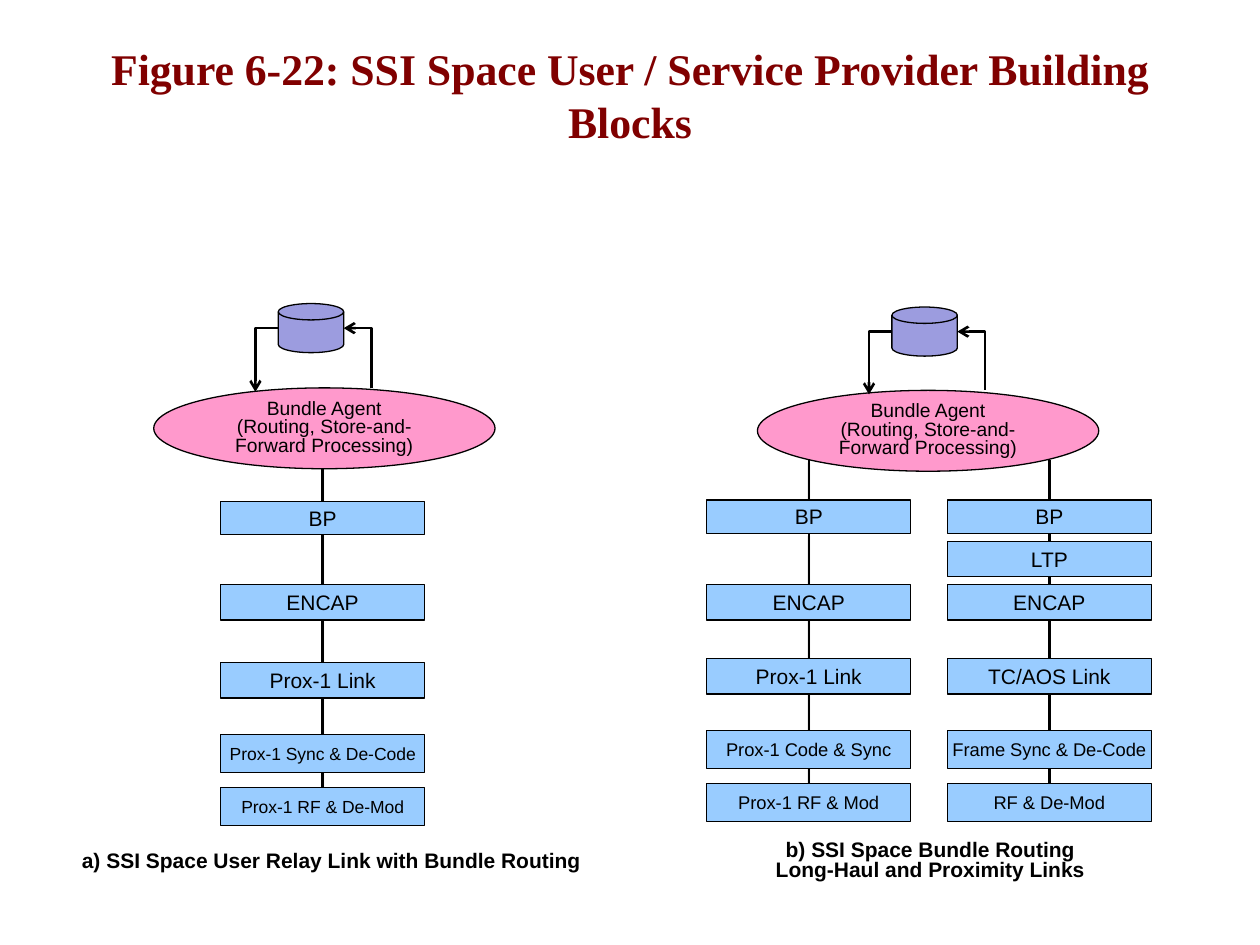
from lxml.etree import SubElement
from pptx import Presentation
from pptx.dml.color import RGBColor
from pptx.enum.shapes import MSO_CONNECTOR as Link, MSO_SHAPE as Shape
from pptx.enum.text import MSO_ANCHOR, MSO_AUTO_SIZE, PP_ALIGN
from pptx.oxml.ns import qn
from pptx.util import Cm, Pt

BLACK = RGBColor(0x00, 0x00, 0x00)
MAROON = RGBColor(0x80, 0x00, 0x00)
BLUE = RGBColor(0x99, 0xCC, 0xFF)
PINK = RGBColor(0xFF, 0x99, 0xCC)
VIOLET = RGBColor(0x9C, 0x9C, 0xDF)

TITLE = "Figure 6-22: SSI Space User / Service Provider Building Blocks"
AGENT = "Bundle Agent\n(Routing, Store-and-Forward Processing)"

# Lengths are centimetres. Layers are (label, top, height, font size);
# joints are the layers at which each length of the spine ends.
GROUPS = [
    {
        "agent": (3.1, 7.82), "disk": (5.61, 6.12), "spine_top": 9.4,
        "caption": "a) SSI Space User Relay Link with Bundle Routing",
        "caption_at": (1.35, 17.04, 10.67, 0.69),
        "stacks": [
            {"left": 4.45, "joints": [-1], "layers": [
                ("BP", 10.11, 0.67, 12),
                ("ENCAP", 11.79, 0.71, 12),
                ("Prox-1 Link", 13.36, 0.71, 12),
                ("Prox-1 Sync & De-Code", 14.81, 0.76, 10),
                ("Prox-1 RF & De-Mod", 15.88, 0.76, 10)]},
        ],
    },
    {
        "agent": (15.27, 7.87), "disk": (17.98, 6.19), "spine_top": 9.27,
        "caption": "b) SSI Space Bundle Routing\nLong-Haul and Proximity Links",
        "caption_at": (15.29, 16.84, 6.93, 1.07),
        "stacks": [
            {"left": 14.25, "joints": [0, -1], "layers": [
                ("BP", 10.08, 0.67, 12),
                ("ENCAP", 11.79, 0.71, 12),
                ("Prox-1 Link", 13.28, 0.71, 12),
                ("Prox-1 Code & Sync", 14.73, 0.76, 10.5),
                ("Prox-1 RF & Mod", 15.8, 0.76, 10.5)]},
            {"left": 19.1, "joints": [0, -1], "layers": [
                ("BP", 10.08, 0.67, 12),
                ("LTP", 10.92, 0.71, 12),
                ("ENCAP", 11.79, 0.71, 12),
                ("TC/AOS Link", 13.28, 0.71, 12),
                ("Frame Sync & De-Code", 14.73, 0.76, 10.5),
                ("RF & De-Mod", 15.8, 0.76, 10.5)]},
        ],
    },
]
LAYER_WIDTH = 4.11
AGENT_WIDTH, AGENT_HEIGHT = 6.88, 1.63
DISK_WIDTH, DISK_HEIGHT = 1.32, 0.99


def write(frame, text, size, color=BLACK, font="Arial", bold=False, spacing=None):
    frame.text = text
    frame.vertical_anchor = MSO_ANCHOR.MIDDLE
    for para in frame.paragraphs:
        para.alignment = PP_ALIGN.CENTER
        if spacing:
            para.line_spacing = spacing
        for span in para.runs:
            span.font.name, span.font.size = font, Pt(size)
            span.font.bold, span.font.color.rgb = bold, color


def add_block(page, kind, at, fill):
    block = page.shapes.add_shape(kind, *map(Cm, at))
    block.shadow.inherit = False
    block.fill.solid()
    block.fill.fore_color.rgb = fill
    block.line.color.rgb, block.line.width = BLACK, Pt(0.75)
    frame = block.text_frame
    frame.word_wrap = True
    frame.margin_left = frame.margin_right = frame.margin_top = frame.margin_bottom = 0
    return block


def add_line(page, kind, start, end):
    """Add a black connector and return it with its empty effect list."""
    line = page.shapes.add_connector(kind, *map(Cm, start + end))
    line.line.color.rgb, line.line.width = BLACK, Pt(1.5)
    return line, SubElement(line._element.spPr, qn("a:effectLst"))


def add_loop(page, start, end, arrow_end):
    """Add a one-bend connector with an arrow at its headEnd or tailEnd."""
    loop, _ = add_line(page, Link.ELBOW, start, end)
    properties = loop._element.spPr
    properties.find(qn("a:prstGeom")).set("prst", "bentConnector2")
    SubElement(properties.find(qn("a:ln")), qn("a:" + arrow_end), type="arrow")


def add_spine(page, start, previous, box):
    """Add a shadowed line behind the blocks, down to the top of box."""
    spine, effects = add_line(page, Link.STRAIGHT, start, start)
    if previous is not None:
        spine.begin_connect(previous, 2)
    spine.end_connect(box, 0)
    shadow = SubElement(effects, qn("a:outerShdw"), dist="20000", dir="5400000")
    color = SubElement(shadow, qn("a:srgbClr"), val="808080")
    SubElement(color, qn("a:alpha"), val="38000")
    page.shapes._spTree.insert(2, spine._element)


def add_stack(page, stack, spine_top):
    boxes = []
    for label, top, height, size in stack["layers"]:
        box = add_block(page, Shape.RECTANGLE,
                        (stack["left"], top, LAYER_WIDTH, height), BLUE)
        write(box.text_frame, label, size)
        boxes.append(box)
    start, previous = (stack["left"] + LAYER_WIDTH / 2, spine_top), None
    for joint in stack["joints"]:
        add_spine(page, start, previous, boxes[joint])
        previous = boxes[joint]


def add_group(page, group):
    agent = add_block(page, Shape.OVAL,
                      group["agent"] + (AGENT_WIDTH, AGENT_HEIGHT), PINK)
    write(agent.text_frame, AGENT, 11, spacing=0.8)

    left, top = group["disk"]
    add_block(page, Shape.FLOWCHART_MAGNETIC_DISK,
              (left, top, DISK_WIDTH, DISK_HEIGHT), VIOLET)
    right, middle, agent_top = left + DISK_WIDTH, top + DISK_HEIGHT / 2, group["agent"][1]
    add_loop(page, (right, middle), (right + 0.56, agent_top), "headEnd")
    add_loop(page, (left, middle), (left - 0.46, agent_top + 0.08), "tailEnd")

    for stack in group["stacks"]:
        add_stack(page, stack, group["spine_top"])

    caption = page.shapes.add_textbox(*map(Cm, group["caption_at"])).text_frame
    write(caption, group["caption"], 12, bold=True, spacing=0.8)
    caption.word_wrap = False
    caption.auto_size = MSO_AUTO_SIZE.SHAPE_TO_FIT_TEXT


def main():
    deck = Presentation()
    deck.slide_width, deck.slide_height = Cm(25.4), Cm(19.05)
    page = deck.slides.add_slide(deck.slide_layouts[5])
    title = page.shapes.title
    title.left, title.top, title.width, title.height = map(Cm, (1.9, 0.85, 21.6, 2.1))
    write(title.text_frame, TITLE, 25, MAROON, "Times New Roman", bold=True)
    title.text_frame.auto_size = MSO_AUTO_SIZE.NONE
    for group in GROUPS:
        add_group(page, group)
    deck.save("out.pptx")


if __name__ == "__main__":
    main()
